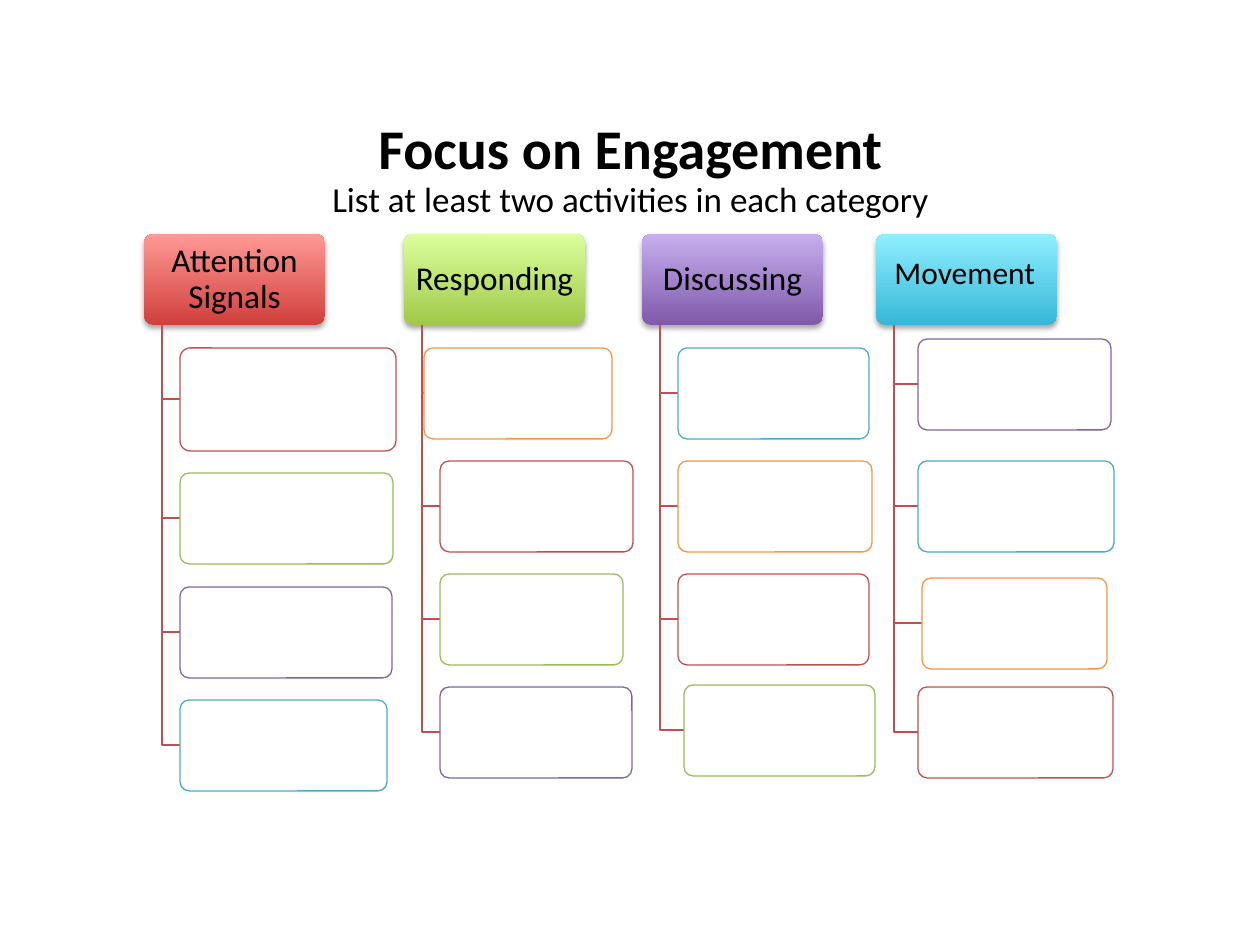
import itertools
from typing import Any, NamedTuple

import pptx
import pptx.dml.color
import pptx.enum.shapes
import pptx.enum.text
import pptx.oxml
import pptx.oxml.ns
import pptx.util

SCALE = 914400 / 126
FONT = "Calibri"
RED, GREEN, PURPLE, TEAL, ORANGE = "BF504D", "9BBB59", "8064A2", "49ACC5", "F79543"
ALIGN = pptx.enum.text.PP_ALIGN
HEAD_TOP, HEAD_W, HEAD_H = 234, 181, 91
STEM = 18
SHADOW = (
    f'<a:outerShdw {pptx.oxml.ns.nsdecls("a")} blurRad="40000" dist="23000" '
    'dir="5400000" rotWithShape="0"><a:srgbClr val="000000">'
    '<a:alpha val="35000"/></a:srgbClr></a:outerShdw>'
)
ALPHA = f'<a:alpha {pptx.oxml.ns.nsdecls("a")} val="89000"/>'


class Box(NamedTuple):
    left: int
    top: int
    width: int
    height: int = 91


class Column(NamedTuple):
    title: str
    left: int
    dark: str
    light: str
    boxes: list[Box]


class Label(NamedTuple):
    text: str
    box: Box
    size: int
    bold: bool
    align: Any


COLUMNS = [
    Column("Attention Signals", 144, "D03F3B", "FF9995", [
        Box(180, 348, 216, 103), Box(180, 473, 213),
        Box(180, 587, 212), Box(180, 700, 207)]),
    Column("Responding", 404, "A0C94A", "DBFF9C", [
        Box(424, 348, 188), Box(440, 461, 193),
        Box(440, 574, 183), Box(440, 687, 192)]),
    Column("Discussing", 642, "7F5AAB", "C7AEED", [
        Box(678, 348, 191), Box(678, 461, 194),
        Box(678, 574, 191), Box(684, 685, 191)]),
    Column("", 876, "36B7D7", "90EFFF", [
        Box(918, 339, 193), Box(918, 461, 196),
        Box(922, 578, 185), Box(918, 687, 195)]),
]
LABELS = [
    Label("Focus on Engagement", Box(24, 107, 1213, 81), 32, True, ALIGN.CENTER),
    Label("List at least two activities in each category",
          Box(156, 171, 949, 55), 20, False, ALIGN.CENTER),
    Label("Movement", Box(882, 247, 168, 50), 18, False, ALIGN.LEFT),
]


def emu(px: int) -> int:
    return round(px * SCALE)


def color(code: str) -> pptx.dml.color.RGBColor:
    return pptx.dml.color.RGBColor.from_string(code)


def write(shape: Any, text: str, size: int, bold: bool, align: Any) -> None:
    frame = shape.text_frame
    frame.word_wrap = True
    frame.text = text
    line = frame.paragraphs[0]
    line.alignment = align
    font = line.runs[0].font
    font.name, font.size, font.bold = FONT, pptx.util.Pt(size), bold
    font.color.rgb = color("000000")


def add_round(slide: Any, box: Box) -> Any:
    kind = pptx.enum.shapes.MSO_SHAPE.ROUNDED_RECTANGLE
    shape = slide.shapes.add_shape(kind, *map(emu, box))
    shape.adjustments[0] = 0.1
    shape.shadow.inherit = False
    return shape


def add_head(slide: Any, col: Column) -> None:
    shape = add_round(slide, Box(col.left, HEAD_TOP, HEAD_W, HEAD_H))
    shape.fill.gradient()
    shape.fill.gradient_angle = 90
    for stop, code, place in zip(shape.fill.gradient_stops, (col.dark, col.light), (0, 1)):
        stop.color.rgb = color(code)
        stop.position = place
    shape.line.fill.background()
    effects = shape.element.spPr.find(pptx.oxml.ns.qn("a:effectLst"))
    effects.append(pptx.oxml.parse_xml(SHADOW))
    if col.title:
        write(shape, col.title, 19, False, ALIGN.CENTER)
        frame = shape.text_frame
        frame.vertical_anchor = pptx.enum.text.MSO_ANCHOR.MIDDLE
        frame.margin_left = frame.margin_right = emu(8)
        frame.margin_top = frame.margin_bottom = emu(7)
        frame.paragraphs[0].line_spacing = 0.9


def add_branch(slide: Any, stem: int, box: Box) -> None:
    """Draw the bent line from a heading down and across to a box."""
    mid = box.top + box.height // 2
    pen = slide.shapes.build_freeform(emu(stem), emu(HEAD_TOP + HEAD_H))
    pen.add_line_segments(
        [(emu(stem), emu(mid)), (emu(box.left), emu(mid))], close=False)
    shape = pen.convert_to_shape()
    shape.fill.background()
    shape.shadow.inherit = False
    set_line(shape, RED)


def set_line(shape: Any, code: str) -> None:
    shape.line.color.rgb = color(code)
    shape.line.width = pptx.util.Pt(0.75)


def add_blank(slide: Any, box: Box, code: str) -> None:
    """Draw an empty box to be filled in."""
    shape = add_round(slide, box)
    shape.fill.solid()
    shape.fill.fore_color.rgb = color("FFFFFF")
    tint = shape.element.spPr.find(
        f'{pptx.oxml.ns.qn("a:solidFill")}/{pptx.oxml.ns.qn("a:srgbClr")}')
    tint.append(pptx.oxml.parse_xml(ALPHA))
    set_line(shape, code)


def add_label(slide: Any, label: Label) -> None:
    shape = slide.shapes.add_textbox(*map(emu, label.box))
    write(shape, label.text, label.size, label.bold, label.align)


def main() -> None:
    deck = pptx.Presentation()
    deck.slide_width = pptx.util.Inches(10)
    deck.slide_height = pptx.util.Inches(7.5)
    slide = deck.slides.add_slide(deck.slide_layouts[6])
    codes = itertools.cycle([RED, GREEN, PURPLE, TEAL, ORANGE])
    for col in COLUMNS:
        add_head(slide, col)
        for box in col.boxes:
            add_branch(slide, col.left + STEM, box)
            add_blank(slide, box, next(codes))
    for label in LABELS:
        add_label(slide, label)
    deck.save("out.pptx")


if __name__ == "__main__":
    main()
